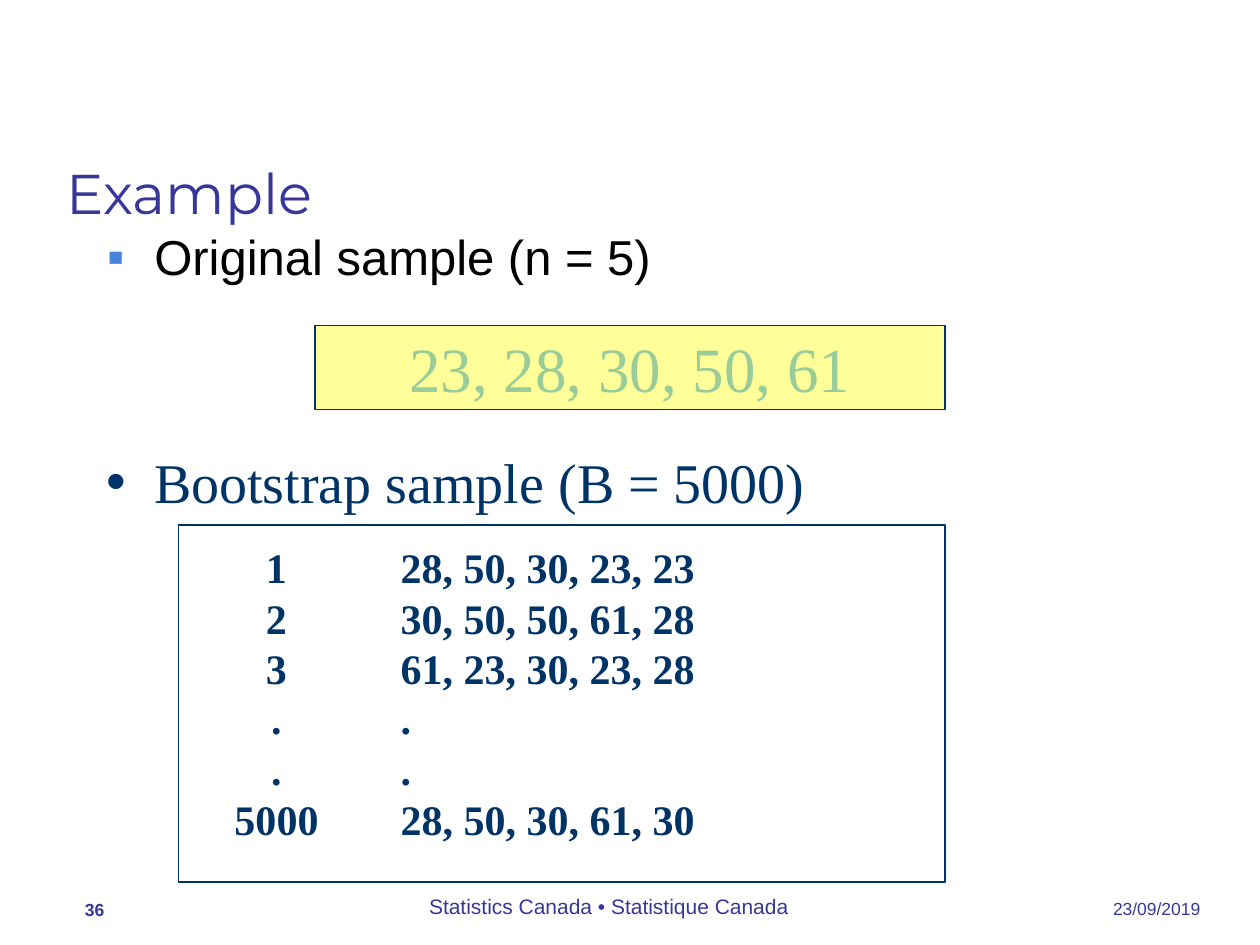
from lxml import etree
from pptx import Presentation
from pptx.dml.color import RGBColor
from pptx.enum.shapes import MSO_SHAPE
from pptx.enum.text import MSO_ANCHOR, MSO_AUTO_SIZE, PP_ALIGN
from pptx.oxml.ns import qn
from pptx.util import Pt

LEFT, CENTER, RIGHT = PP_ALIGN.LEFT, PP_ALIGN.CENTER, PP_ALIGN.RIGHT
TOP, MIDDLE, BOTTOM = MSO_ANCHOR.TOP, MSO_ANCHOR.MIDDLE, MSO_ANCHOR.BOTTOM
NO_AUTOFIT = MSO_AUTO_SIZE.NONE
RECTANGLE = MSO_SHAPE.RECTANGLE

INDIGO = RGBColor(0x37, 0x37, 0x99)
BULLET_BLUE = RGBColor(0x46, 0x82, 0xD6)
NAVY = RGBColor(0x00, 0x33, 0x66)
YELLOW = RGBColor(0xFF, 0xFF, 0x99)
GREEN = RGBColor(0x99, 0xCC, 0x99)
BLACK = RGBColor(0, 0, 0)

SANS, SERIF, HEADING = "Arial", "Times New Roman", "Montserrat"
LINE_FACTOR = 1.2

BOOTSTRAP_SAMPLES = [
    ("1", "28, 50, 30, 23, 23"),
    ("2", "30, 50, 50, 61, 28"),
    ("3", "61, 23, 30, 23, 28"),
    (".", "."),
    (".", "."),
    ("5000", "28, 50, 30, 61, 30"),
]


def place(shape, box):
    shape.left, shape.top, shape.width, shape.height = (Pt(value) for value in box)


def write(shape, text, font, size, color, bold=False, align=LEFT, anchor=TOP,
          wrap=True, line_spacing=None):
    """Fill a shape with text, one paragraph a line, in a single style."""
    frame = shape.text_frame
    frame.text = text
    frame.word_wrap = wrap
    frame.auto_size = NO_AUTOFIT
    frame.vertical_anchor = anchor
    for paragraph in frame.paragraphs:
        paragraph.alignment = align
        paragraph.space_before = Pt(0)
        if line_spacing:
            paragraph.line_spacing = Pt(line_spacing)
        for run in paragraph.runs:
            run.font.name = font
            run.font.size = Pt(size)
            run.font.bold = bold
            run.font.color.rgb = color


def add_text(slide, box, text, *style, **options):
    shape = slide.shapes.add_textbox(*(Pt(value) for value in box))
    write(shape, text, *style, **options)
    return shape


def add_bullet(paragraph, character, color):
    properties = paragraph._p.get_or_add_pPr()
    properties.set("marL", str(Pt(27)))
    properties.set("indent", str(-Pt(27)))
    bullet_color = etree.SubElement(properties, qn("a:buClr"))
    etree.SubElement(bullet_color, qn("a:srgbClr"), val=str(color))
    etree.SubElement(properties, qn("a:buFont"), typeface=SANS)
    etree.SubElement(properties, qn("a:buChar"), char=character)


def add_frame(slide, box, fill=None):
    frame = slide.shapes.add_shape(RECTANGLE, *(Pt(value) for value in box))
    frame.shadow.inherit = False
    if fill is None:
        frame.fill.background()
    else:
        frame.fill.solid()
        frame.fill.fore_color.rgb = fill
    frame.line.color.rgb = NAVY
    frame.line.width = Pt(0.75)
    return frame


def fill_title(title, box):
    place(title, box)
    write(title, "Example", HEADING, 32, INDIGO, anchor=BOTTOM)


def add_original_sample(slide, body, box):
    left, top, width, height = box
    place(body, (left, top, width, 54))
    write(body, "Original sample (n = 5)", SANS, 28, BLACK,
          line_spacing=28 * LINE_FACTOR)
    add_bullet(body.text_frame.paragraphs[0], "▪", BULLET_BLUE)
    values = add_frame(slide, (left + 126, top + height - 48, 360, 48), YELLOW)
    write(values, "23, 28, 30, 50, 61", SERIF, 36, GREEN,
          align=CENTER, anchor=MIDDLE, wrap=False)


def add_bootstrap_samples(slide, box):
    left, top, width, height = box
    heading = add_text(slide, (left, top, width, 54), "Bootstrap sample (B = 5000)",
                       SERIF, 32, NAVY, line_spacing=32 * LINE_FACTOR)
    add_bullet(heading.text_frame.paragraphs[0], "•", NAVY)
    numbers, samples = ("\n".join(column) for column in zip(*BOOTSTRAP_SAMPLES))
    columns = [(70.5, 67, numbers, CENTER), (167.8, 330, samples, LEFT)]
    for offset, column_width, text, align in columns:
        add_text(slide, (left + offset, top + 54, column_width, 180), text,
                 SERIF, 24, NAVY, bold=True, align=align,
                 line_spacing=24 * LINE_FACTOR)
    add_frame(slide, (left + 48, top + 48, 438, height - 48))


def add_footer(slide, box):
    left, top, width, height = box
    add_text(slide, (left + width - 83, top, 83, height), "23/09/2019",
             SANS, 10, INDIGO, align=RIGHT, anchor=BOTTOM)
    number = add_text(slide, (left, top + 1, 46, height), "36",
                      SANS, 10, INDIGO, bold=True, anchor=BOTTOM)
    number.text_frame.margin_left = Pt(17.5)
    add_text(slide, (left + 79, top, 476, height),
             "Statistics Canada • Statistique Canada",
             SANS, 12, INDIGO, align=CENTER, anchor=BOTTOM)


def main():
    presentation = Presentation()
    presentation.slide_width, presentation.slide_height = Pt(720), Pt(540)
    slide = presentation.slides.add_slide(presentation.slide_layouts[1])
    fill_title(slide.shapes.title, (31, 77, 658, 55.5))
    add_original_sample(slide, slide.placeholders[1], (54, 126, 612, 108))
    add_bootstrap_samples(slide, (54, 252, 612, 252))
    add_footer(slide, (31, 491, 662, 37.5))
    presentation.save("out.pptx")


if __name__ == "__main__":
    main()
